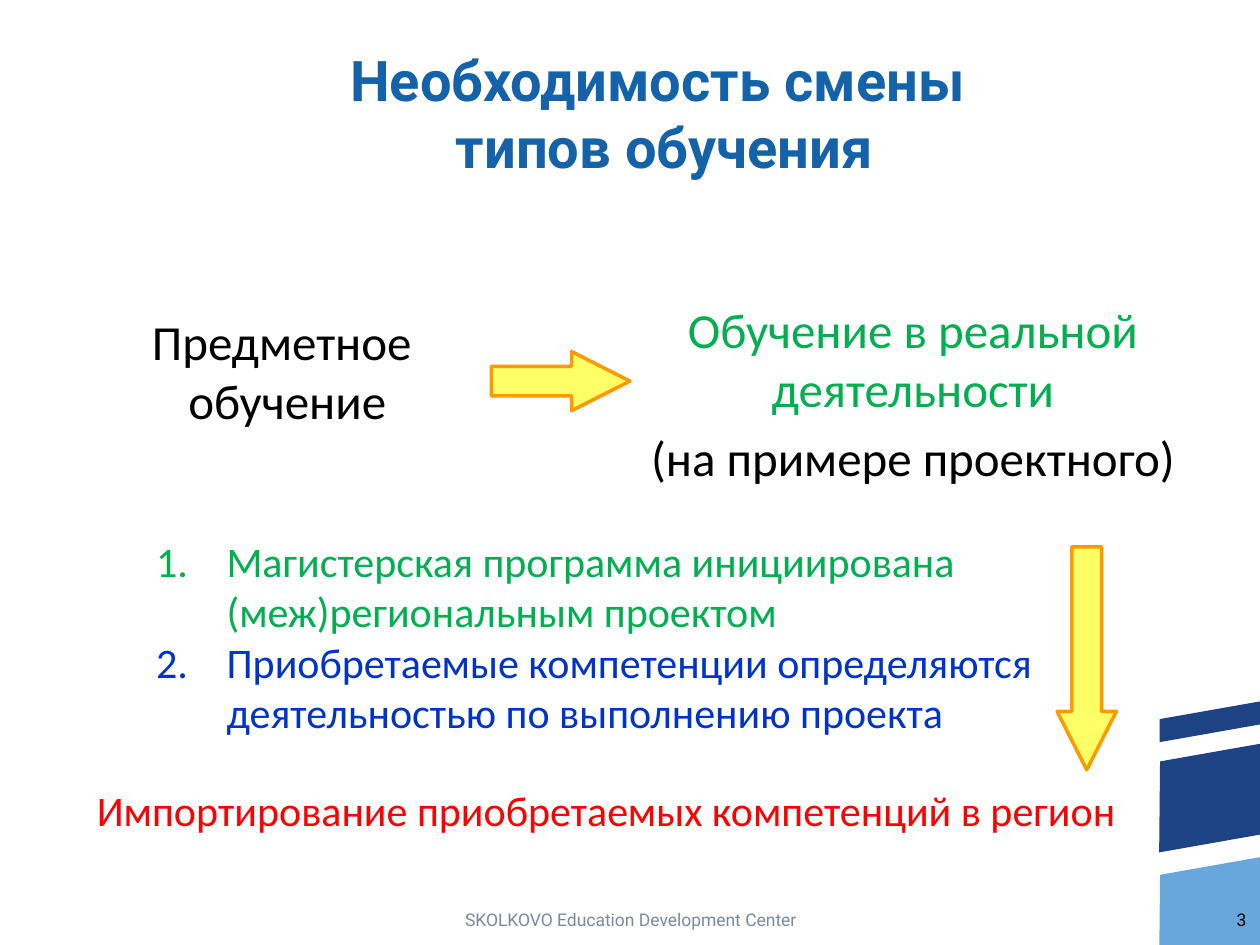
from lxml.etree import SubElement
from pptx import Presentation
from pptx.dml.color import RGBColor
from pptx.enum.shapes import MSO_SHAPE
from pptx.enum.text import MSO_ANCHOR, PP_ALIGN
from pptx.oxml.ns import qn
from pptx.util import Pt

SCALE = 9144
GREEN, BLACK = "00B050", "000000"


def px(n):
    """Turn px, a hundred to the inch, into EMU."""
    return round(n * SCALE)


def tint(hue):
    """Turn a hex string into a colour."""
    return RGBColor.from_string(hue)


def shape(slide, kind, box, fill, line=None, turn=0, adj=()):
    """Add a flat preset shape."""
    item = slide.shapes.add_shape(kind, *map(px, box))
    item.shadow.inherit = False
    item.rotation = turn
    item.fill.solid()
    item.fill.fore_color.rgb = tint(fill)
    if line:
        item.line.color.rgb = tint(line)
        item.line.width = Pt(2)
    else:
        item.line.fill.background()
    for i, value in enumerate(adj):
        item.adjustments[i] = value
    return item


def label(slide, box):
    """Add an empty text box."""
    return slide.shapes.add_textbox(*map(px, box))


def write(item, paras, size, face="Calibri", align=PP_ALIGN.LEFT,
          anchor=MSO_ANCHOR.TOP, bold=False, after=0, inset=None, hang=0):
    """Write (text, colour) paragraphs into a shape, numbered if they hang."""
    frame = item.text_frame
    frame.word_wrap = True
    frame.vertical_anchor = anchor
    if inset is not None:
        frame.margin_left = frame.margin_right = px(inset)
        frame.margin_top = frame.margin_bottom = px(inset)
    for i, (text, hue) in enumerate(paras):
        para = frame.add_paragraph() if i else frame.paragraphs[0]
        para.alignment = align
        para.space_after = Pt(after)
        if hang:
            props = para._p.get_or_add_pPr()
            props.set("marL", str(px(hang)))
            props.set("indent", str(-px(hang)))
            SubElement(props, qn("a:buAutoNum"), type="arabicPeriod")
        for j, part in enumerate(text.split("\n")):
            if j:
                para.add_line_break()
            run = para.add_run()
            run.text = part
            run.font.name = face
            run.font.size = Pt(size)
            run.font.bold = bold
            run.font.color.rgb = tint(hue)


def stripes(slide, x, y):
    """Draw the slanted bands of the corner."""
    bands = [(0, 34, 104, 71, "1E4385"), (5, 0, 94, 18, "1E4385"),
             (0, 124, 104, 71, "67A7DE")]
    for left, top, w, h, fill in bands:
        shape(slide, MSO_SHAPE.PARALLELOGRAM, (x + left, y + top, w, h),
              fill, turn=350, adj=[0.187])


def footer(slide, x, y):
    """Write the centre name and the slide number."""
    write(label(slide, (x + 600, y, 57, 36)), [("3", BLACK)], 10, "Roboto",
          PP_ALIGN.RIGHT, MSO_ANCHOR.MIDDLE)
    write(label(slide, (x, y, 317, 36)),
          [("SKOLKOVO Education Development Center", "7A8B9E")], 10, "Roboto",
          PP_ALIGN.CENTER, MSO_ANCHOR.MIDDLE)


def title(slide, box):
    """Write the slide title."""
    write(label(slide, box),
          [("Необходимость смены \nтипов обучения", "1362AA")], 32, "Roboto",
          PP_ALIGN.CENTER, MSO_ANCHOR.BOTTOM, bold=True, inset=4)


def panel(slide, box, paras):
    """Draw a white panel with centred text."""
    item = shape(slide, MSO_SHAPE.RECTANGLE, box, "FFFFFF")
    write(item, paras, 28, align=PP_ALIGN.CENTER, anchor=MSO_ANCHOR.MIDDLE,
          after=6)


def arrow(slide, box, turn=0):
    """Draw a yellow block arrow."""
    shape(slide, MSO_SHAPE.RIGHT_ARROW, box, "FFFF66", "FF9900", turn,
          [0.5, 0.985])


def shift(slide, x, y):
    """Show the move from one type of learning to the other."""
    panel(slide, (x, y, 354, 252), [("Предметное \nобучение", BLACK)])
    panel(slide, (x + 449, y + 18, 449, 252),
          [("Обучение в реальной деятельности", GREEN),
           ("(на примере проектного)", BLACK)])
    arrow(slide, (x + 339, y + 111, 110, 47))


def result(slide, x, y):
    """List the features and the outcome they lead to."""
    write(label(slide, (x + 47, y, 759, 172)),
          [("Магистерская программа инициирована (меж)региональным проектом",
            GREEN),
           ("Приобретаемые компетенции определяются деятельностью "
            "по выполнению проекта", "0033CC")], 24, hang=56)
    write(label(slide, (x, y + 198, 844, 50)),
          [("Импортирование приобретаемых компетенций в регион", "FF0000")],
          24)
    arrow(slide, (x + 707, y + 79, 177, 47), 90)


def main():
    """Build the slide and save it."""
    deck = Presentation()
    deck.slide_width, deck.slide_height = px(1000), px(750)
    slide = deck.slides.add_slide(deck.slide_layouts[6])
    stripes(slide, 913, 563)
    footer(slide, 342, 712)
    title(slide, (169, 76, 717, 71))
    shift(slide, 51, 168)
    result(slide, 67, 420)
    deck.save("out.pptx")


if __name__ == "__main__":
    main()
